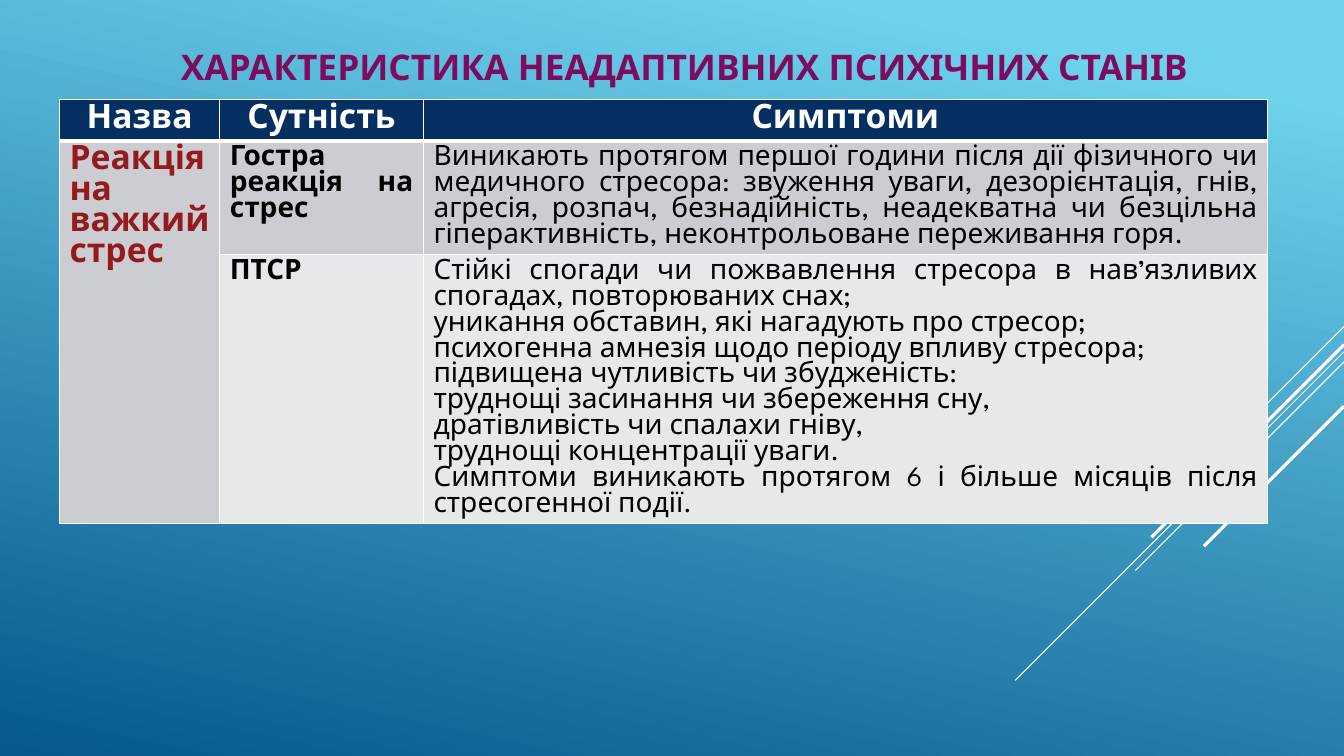
from lxml import etree
from pptx import Presentation
from pptx.dml.color import RGBColor
from pptx.enum import shapes, text
from pptx.oxml import ns
from pptx.util import Inches, Pt

WIDTH, HEIGHT = 13.33, 7.5
WHITE, BLACK, NAVY, PLUM, RED = "FFFFFF", "000000", "052F61", "7C0B61", "941A1B"
GREY, PALE_GREY = "CCCDD2", "E7E8EA"
CENTER, JUSTIFY = text.PP_ALIGN.CENTER, text.PP_ALIGN.JUSTIFY

TITLE = "ХАРАКТЕРИСТИКА НЕАДАПТИВНИХ ПСИХІЧНИХ СТАНІВ"
HEADINGS = ["Назва", "Сутність", "Симптоми"]
CONDITION = "Реакція на важкий стрес"
ACUTE_SYMPTOMS = (
    "Виникають протягом першої години після дії фізичного чи медичного стресора: "
    "звуження уваги, дезорієнтація, гнів, агресія, розпач, безнадійність, неадекватна "
    "чи безцільна гіперактивність, неконтрольоване переживання горя."
)
PTSD_SYMPTOMS = [
    "Стійкі спогади чи пожвавлення стресора в нав’язливих спогадах, повторюваних снах;",
    "уникання обставин, які нагадують про стресор;",
    "психогенна амнезія щодо періоду впливу стресора;",
    "підвищена чутливість чи збудженість:",
    "труднощі засинання чи збереження сну,",
    "дратівливість чи спалахи гніву,",
    "труднощі концентрації уваги.",
    "Симптоми виникають протягом 6 і більше місяців після стресогенної події.",
]
COLUMN_WIDTHS = [1.59, 2.02, 8.37]
ROW_HEIGHTS = [0.41, 1.12, 2.66]
# Height on the right edge, horizontal run, line width
RAYS = [(3.24, 1, 0.75), (3.49, 3.26, 0.75), (3.59, 2.07, 0.75), (3.42, 1.91, 2.25), (4.03, 1.39, 2.25)]


def rgb(value):
    return RGBColor.from_string(value)


class StressSlide:
    font = "League Spartan"

    def __init__(self, deck):
        self.slide = deck.slides.add_slide(deck.slide_layouts[5])

    def background(self, start, end):
        fill = self.slide.background.fill
        fill.gradient()
        fill.gradient_angle = 258
        for stop, (position, color) in zip(fill.gradient_stops, (start, end)):
            stop.position = position
            stop.color.rgb = rgb(color)

    def ray(self, top, run, width):
        """Draw a 45° line down and left from the right edge."""
        line = self.slide.shapes.add_connector(
            shapes.MSO_CONNECTOR.STRAIGHT,
            Inches(WIDTH), Inches(top), Inches(WIDTH - run), Inches(top + run))
        line.line.color.rgb = rgb(WHITE)
        line.line.width = Pt(width)
        etree.SubElement(line._element.spPr, ns.qn("a:effectLst"))

    def set_text(self, frame, lines, size, color, bold=True, align=JUSTIFY):
        frame.text = "\n".join(lines)
        style = {"name": self.font, "size": Pt(size), "bold": bold}
        for paragraph in frame.paragraphs:
            paragraph.alignment = align
            font = paragraph.runs[0].font
            for key, value in style.items():
                setattr(font, key, value)
            font.color.rgb = rgb(color)

    def title(self, heading, left, top, width, height):
        title = self.slide.shapes.title
        box = {"left": left, "top": top, "width": width, "height": height}
        for side, length in box.items():
            setattr(title, side, Inches(length))
        self.set_text(title.text_frame, [heading], 25.2, PLUM, align=CENTER)
        title.text_frame.vertical_anchor = text.MSO_ANCHOR.MIDDLE

    def table(self, left, top, widths, heights):
        table = self.slide.shapes.add_table(
            len(heights), len(widths), Inches(left), Inches(top),
            Inches(sum(widths)), Inches(sum(heights))).table
        for column, width in zip(table.columns, widths):
            column.width = Inches(width)
        for row, height in zip(table.rows, heights):
            row.height = Inches(height)
        return table

    def paint(self, cell, fill, bottom=1):
        """Give a cell white borders and a solid fill."""
        properties = cell._tc.get_or_add_tcPr()
        for side, width in {"L": 1, "R": 1, "T": 1, "B": bottom}.items():
            border = etree.SubElement(properties, ns.qn(f"a:ln{side}"), w=str(Pt(width)))
            solid = etree.SubElement(border, ns.qn("a:solidFill"))
            etree.SubElement(solid, ns.qn("a:srgbClr"), val=WHITE)
        cell.fill.solid()
        cell.fill.fore_color.rgb = rgb(fill)


def main():
    deck = Presentation()
    deck.slide_width, deck.slide_height = Inches(WIDTH), Inches(HEIGHT)
    page = StressSlide(deck)
    page.background((0.1, "6ED2EB"), (1, "06588E"))
    for ray in RAYS:
        page.ray(*ray)
    page.title(TITLE, 1.56, 0.33, 10.46, 0.65)

    states = page.table(0.59, 0.99, COLUMN_WIDTHS, ROW_HEIGHTS)
    for column, heading in enumerate(HEADINGS):
        cell = states.cell(0, column)
        page.paint(cell, NAVY, bottom=3)
        page.set_text(cell.text_frame, [heading], 24, WHITE, align=CENTER)

    condition = states.cell(1, 0)
    condition.merge(states.cell(2, 0))
    for row in (1, 2):
        page.paint(states.cell(row, 0), GREY)
    page.set_text(condition.text_frame, [CONDITION], 24, RED)

    reactions = [("Гостра реакція на стрес", [ACUTE_SYMPTOMS], GREY),
                 ("ПТСР", PTSD_SYMPTOMS, PALE_GREY)]
    for row, (essence, symptoms, fill) in enumerate(reactions, start=1):
        for column, lines in enumerate(([essence], symptoms), start=1):
            cell = states.cell(row, column)
            page.paint(cell, fill)
            page.set_text(cell.text_frame, lines, 20, BLACK, bold=column == 1)

    deck.save("out.pptx")


if __name__ == "__main__":
    main()
